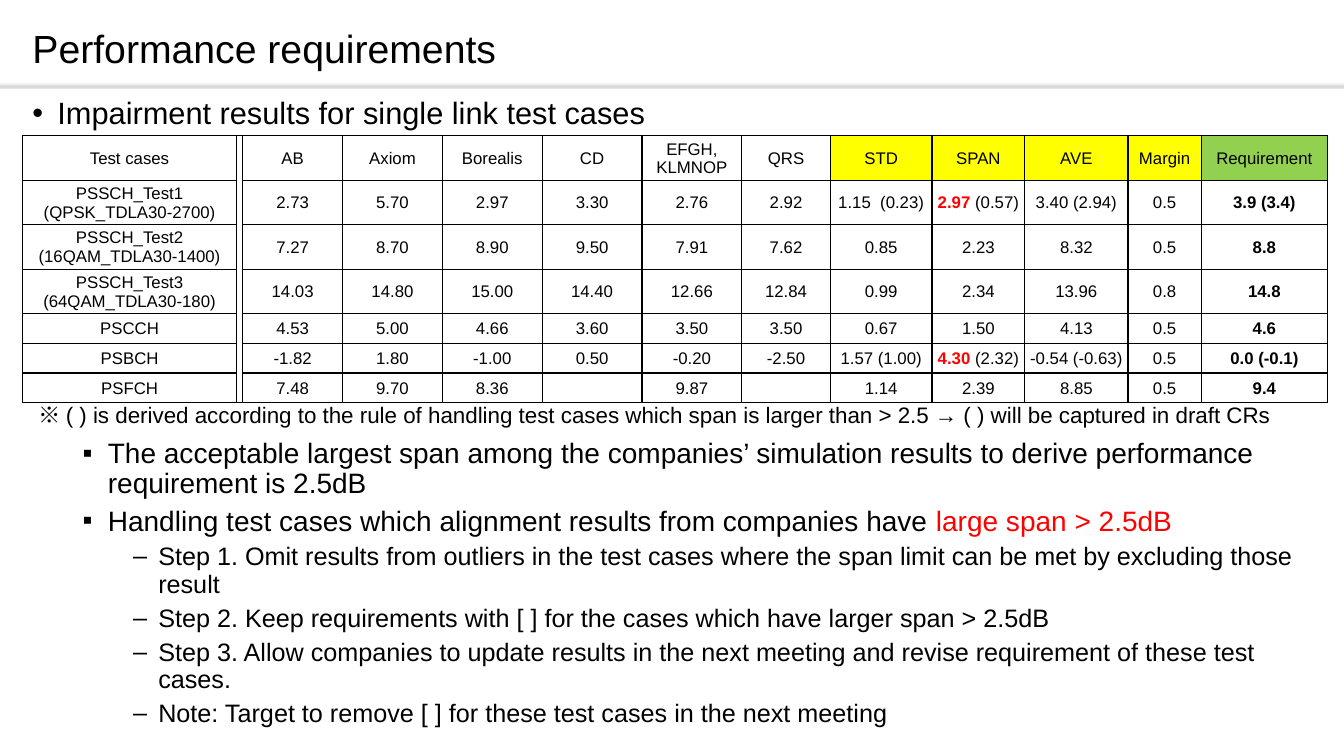
from lxml.etree import SubElement
from pptx import Presentation
from pptx.dml.color import RGBColor
from pptx.enum.shapes import MSO_SHAPE
from pptx.enum.text import MSO_ANCHOR, PP_ALIGN
from pptx.oxml.ns import qn
from pptx.util import Pt

# Content
TITLE = "Performance requirements"
HEADING = "Impairment results for single link test cases"
HEADER = ["Test cases", "", "AB", "Axiom", "Borealis", "CD", "EFGH,\vKLMNOP", "QRS",
          "STD", "SPAN", "AVE", "Margin", "Requirement"]
RESULTS = [
    ["PSSCH_Test1\v(QPSK_TDLA30-2700)", "", "2.73", "5.70", "2.97", "3.30", "2.76", "2.92",
     "1.15  (0.23)", ("2.97 ", "(0.57)"), "3.40 (2.94)", "0.5", "3.9 (3.4)"],
    ["PSSCH_Test2\v(16QAM_TDLA30-1400)", "", "7.27", "8.70", "8.90", "9.50", "7.91", "7.62",
     "0.85", "2.23", "8.32", "0.5", "8.8"],
    ["PSSCH_Test3\v(64QAM_TDLA30-180)", "", "14.03", "14.80", "15.00", "14.40", "12.66", "12.84",
     "0.99", "2.34", "13.96", "0.8", "14.8"],
    ["PSCCH", "", "4.53", "5.00", "4.66", "3.60", "3.50", "3.50",
     "0.67", "1.50", "4.13", "0.5", "4.6"],
    ["PSBCH", "", "-1.82", "1.80", "-1.00", "0.50", "-0.20", "-2.50",
     "1.57 (1.00)", ("4.30 ", "(2.32)"), "-0.54 (-0.63)", "0.5", "0.0 (-0.1)"],
    ["PSFCH", "", "7.48", "9.70", "8.36", "", "9.87", "",
     "1.14", "2.39", "8.85", "0.5", "9.4"],
]
NOTE_MARK = "※ "
NOTE = ("( ) is derived according to the rule of handling test cases which span is larger "
        "than > 2.5 → ( ) will be captured in draft CRs")
# Each point: level, plain text, red text
POINTS = [
    (1, "The acceptable largest span among the companies’ simulation results to derive "
        "performance requirement is 2.5dB", ""),
    (1, "Handling test cases which alignment results from companies have ", "large span > 2.5dB"),
    (2, "Step 1. Omit results from outliers in the test cases where the span limit can be met "
        "by excluding those result", ""),
    (2, "Step 2. Keep requirements with [ ] for the cases which have larger span > 2.5dB", ""),
    (2, "Step 3. Allow companies to update results in the next meeting and revise requirement "
        "of these test cases.", ""),
    (2, "Note: Target to remove [ ] for these test cases in the next meeting", ""),
]

# Style
COLORS = {"text": "000000", "alert": "FF0000", "statistic": "FFFF00", "requirement": "92D050"}
BAR_STOPS = [(0, "FAFAFA"), (74, "D7D7D7"), (83, "D7D7D7"), (100, "E4E4E4")]
FONT, MARK_FONT = "Arial", "Noto Sans CJK KR"
LEVELS = [("•", 22), ("▪", 20), ("‒", 18)]  # bullet and text size
LEFT, WIDTH = 16, 931.7
COLUMNS = [153.2, 3.6] + [71.3] * 5 + [63.2, 72.7, 66.2, 73.8, 52.4, 90.1]
ROWS = [31.8] * 4 + [21.2] * 3
GAP_COLUMN, STATISTICS, REQUIREMENT = 1, range(8, 12), 12


def color(name):
    return RGBColor.from_string(COLORS[name])


def set_font(font, size, bold=False):
    font.name, font.size, font.bold = FONT, Pt(size), bold
    font.color.rgb = color("text")


def add_text_box(left, top, height):
    box = page.shapes.add_textbox(Pt(left), Pt(top), Pt(LEFT + WIDTH - left), Pt(height))
    box.text_frame.word_wrap = True
    return box.text_frame


def write_bullet(para, level, text, red_text="", space_before=0):
    bullet, size = LEVELS[level]
    props = para._p.get_or_add_pPr()
    props.set("marL", str(Pt(18 + 36 * level)))
    props.set("indent", str(Pt(-18)))
    para.line_spacing, para.space_before = 0.9, Pt(space_before)
    SubElement(props, qn("a:buFont"), typeface=FONT)
    SubElement(props, qn("a:buChar"), char=bullet)
    set_font(para.font, size)
    para.add_run().text = text
    if red_text:
        span = para.add_run()
        span.text = red_text
        span.font.color.rgb = color("alert")


def add_borders(cell):
    props = cell._tc.get_or_add_tcPr()
    for index, side in enumerate(["lnL", "lnR", "lnT", "lnB"]):
        line = SubElement(props, qn(f"a:{side}"), w=str(Pt(1)))
        fill = SubElement(line, qn("a:solidFill"))
        SubElement(fill, qn("a:srgbClr"), val=COLORS["text"])
        props.insert(index, line)


def write_cell(cell, content, row, column):
    cell.margin_left = cell.margin_right = cell.margin_top = Pt(0.72)
    cell.margin_bottom = 0
    cell.vertical_anchor = MSO_ANCHOR.MIDDLE
    para = cell.text_frame.paragraphs[0]
    para.alignment = PP_ALIGN.CENTER
    set_font(para.font, 12, bold=row > 0 and column == REQUIREMENT)
    if isinstance(content, tuple):
        alert, rest = para.add_run(), para.add_run()
        alert.text, rest.text = content
        alert.font.bold = True
        alert.font.color.rgb = color("alert")
    elif content:
        para.text = content
    if row == 0 and column >= STATISTICS[0]:
        cell.fill.solid()
        cell.fill.fore_color.rgb = color("statistic" if column in STATISTICS else "requirement")
    else:
        cell.fill.background()
    add_borders(cell)


deck = Presentation()
deck.slide_width, deck.slide_height = Pt(960), Pt(540)
page = deck.slides.add_slide(deck.slide_layouts[5])

# Gradient bar under the title
bar = page.shapes.add_shape(MSO_SHAPE.RECTANGLE, 0, Pt(59.3), Pt(960), Pt(3.6))
bar.shadow.inherit = False
bar.line.fill.background()
bar.fill.gradient()
bar.fill.gradient_angle = 270
stops = bar._element.spPr.find(qn("a:gradFill")).find(qn("a:gsLst"))
for stop in list(stops):
    stops.remove(stop)
for position, shade in BAR_STOPS:
    stop = SubElement(stops, qn("a:gs"), pos=str(position * 1000))
    SubElement(stop, qn("a:srgbClr"), val=shade)

# Title
title = page.shapes.title
title.left, title.top, title.width, title.height = Pt(LEFT), Pt(13), Pt(WIDTH), Pt(46.8)
title.text_frame.text = TITLE
title.text_frame.vertical_anchor = MSO_ANCHOR.MIDDLE
title_para = title.text_frame.paragraphs[0]
title_para.alignment, title_para.line_spacing = PP_ALIGN.LEFT, 0.9
set_font(title_para.font, 28)

# Heading
write_bullet(add_text_box(LEFT, 66.2, 30).paragraphs[0], 0, HEADING)

# Results table
frame = page.shapes.add_table(len(ROWS), len(COLUMNS), Pt(LEFT), Pt(97), Pt(WIDTH), Pt(sum(ROWS)))
table = frame.table
table.first_row = table.horz_banding = False
for column, width in enumerate(COLUMNS):
    table.columns[column].width = Pt(width)
for row, (height, contents) in enumerate(zip(ROWS, [HEADER] + RESULTS)):
    table.rows[row].height = Pt(height)
    for column, content in enumerate(contents):
        write_cell(table.cell(row, column), content, row, column)
table.cell(0, GAP_COLUMN).merge(table.cell(len(ROWS) - 1, GAP_COLUMN))

# Note under the table
note = add_text_box(LEFT + 4.4, 285, 28).paragraphs[0]
note.line_spacing = 0.9
set_font(note.font, 16)
mark = note.add_run()
mark.text, mark.font.name = NOTE_MARK, MARK_FONT
SubElement(mark._r.get_or_add_rPr(), qn("a:ea"), typeface=MARK_FONT)
note.add_run().text = NOTE

# Rules for large spans
rules = add_text_box(LEFT, 310.3, 225)
for index, (level, text, red_text) in enumerate(POINTS):
    rule = rules.add_paragraph() if index else rules.paragraphs[0]
    write_bullet(rule, level, text, red_text, space_before=5 if index else 0)

deck.save("out.pptx")
